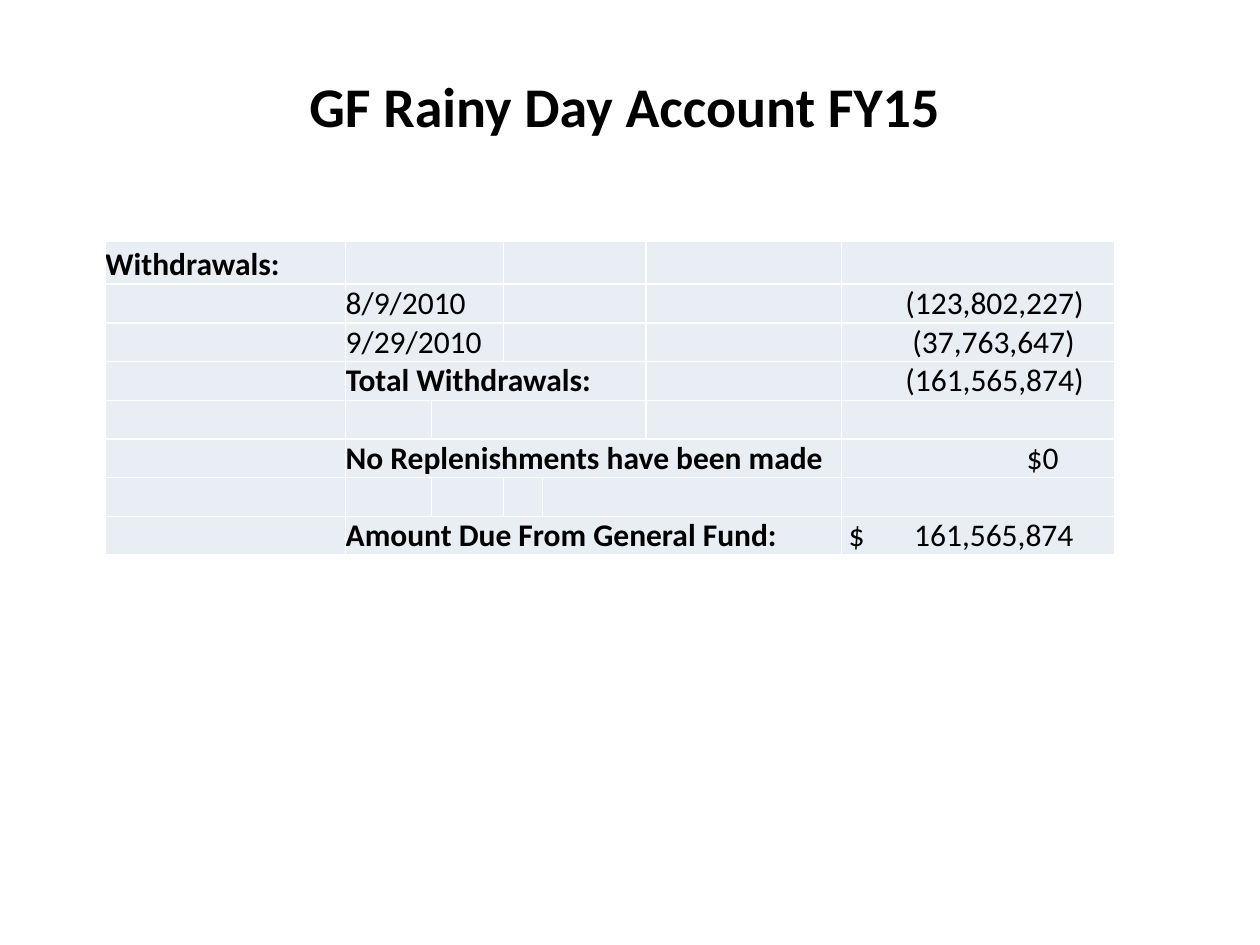
import dataclasses

import lxml.etree
import pptx
import pptx.dml.color
import pptx.enum.text
import pptx.oxml.ns
import pptx.util

Cm = pptx.util.Cm
Pt = pptx.util.Pt
ALIGN = pptx.enum.text.PP_ALIGN
MIDDLE = pptx.enum.text.MSO_ANCHOR.MIDDLE
BOTTOM = pptx.enum.text.MSO_ANCHOR.BOTTOM


@dataclasses.dataclass(frozen=True)
class Theme:
    font: str = "Calibri"
    ink: str = "000000"
    fill: str = "E9EDF4"
    rule: str = "FFFFFF"
    head: int = 32
    body: int = 18
    line: int = 1


@dataclasses.dataclass(frozen=True)
class Entry:
    """Text of one cell; pad is the right inset in cm of a right-aligned sum."""
    text: str
    bold: bool = False
    pad: float = 0
    left: float = 0
    tab: float = 0


COLS = [4.85, 1.73, 1.45, 0.79, 2.08, 3.94, 5.51]
FIRST, OTHER = 0.86, 0.78

# Each row: the column spans, then the entries by column.
ROWS = [
    ([1, 2, 2, 1, 1], {0: Entry("Withdrawals:", True)}),
    ([1, 2, 2, 1, 1], {1: Entry("8/9/2010"),
                       6: Entry("(123,802,227)", pad=0.62)}),
    ([1, 2, 2, 1, 1], {1: Entry("9/29/2010"),
                       6: Entry("(37,763,647)", pad=0.8)}),
    ([1, 4, 1, 1], {1: Entry("Total Withdrawals:", True),
                    6: Entry("(161,565,874)", pad=0.62)}),
    ([1, 1, 3, 1, 1], {}),
    ([1, 5, 1], {1: Entry("No Replenishments have been made", True),
                 6: Entry("$0", pad=1.13)}),
    ([1, 1, 1, 1, 2, 1], {}),
    ([1, 5, 1], {1: Entry("Amount Due From General Fund:", True),
                 6: Entry("$\t161,565,874", left=0.15, tab=1.32)}),
]


def tint(hue):
    return pptx.dml.color.RGBColor.from_string(hue)


def add_node(parent, tag, **attrs):
    node = lxml.etree.SubElement(parent, pptx.oxml.ns.qn(tag))
    for name, value in attrs.items():
        node.set(name, str(value))
    return node


class Maker:
    def __init__(self, slide, theme):
        self.slide = slide
        self.theme = theme

    def add_text(self, para, text, size, bold):
        run = para.add_run()
        run.text = text
        run.font.name = self.theme.font
        run.font.size = Pt(size)
        run.font.bold = bold
        run.font.color.rgb = tint(self.theme.ink)

    def title(self, text, left, top, width, height):
        shape = self.slide.shapes.title
        shape.left, shape.top = Cm(left), Cm(top)
        shape.width, shape.height = Cm(width), Cm(height)
        shape.text_frame.vertical_anchor = MIDDLE
        para = shape.text_frame.paragraphs[0]
        para.alignment = ALIGN.CENTER
        self.add_text(para, text, self.theme.head, True)

    def rule(self, cell):
        """Draw all four borders, ahead of the fill as the schema asks."""
        props = cell._tc.get_or_add_tcPr()
        for side in ("a:lnL", "a:lnR", "a:lnT", "a:lnB"):
            line = add_node(props, side, w=Pt(self.theme.line))
            add_node(add_node(line, "a:solidFill"), "a:srgbClr",
                     val=self.theme.rule)

    def style(self, cell):
        self.rule(cell)
        cell.fill.solid()
        cell.fill.fore_color.rgb = tint(self.theme.fill)
        cell.margin_left = cell.margin_right = 0
        cell.margin_top = cell.margin_bottom = 0
        cell.vertical_anchor = BOTTOM

    def enter(self, cell, entry):
        para = cell.text_frame.paragraphs[0]
        cell.margin_left = Cm(entry.left)
        cell.margin_right = Cm(entry.pad)
        para.alignment = ALIGN.RIGHT if entry.pad else ALIGN.LEFT
        if entry.tab:
            stops = add_node(para._p.get_or_add_pPr(), "a:tabLst")
            add_node(stops, "a:tab", pos=Cm(entry.tab), algn="l")
        self.add_text(para, entry.text, self.theme.body, entry.bold)

    def table(self, rows, cols, left, top):
        highs = [FIRST] + [OTHER] * (len(rows) - 1)
        frame = self.slide.shapes.add_table(
            len(rows), len(cols), Cm(left), Cm(top),
            Cm(sum(cols)), Cm(sum(highs)))
        grid = frame.table
        grid.first_row = grid.horz_banding = False
        for col, width in zip(grid.columns, cols):
            col.width = Cm(width)
        for row, high in zip(grid.rows, highs):
            row.height = Cm(high)
        for cell in grid.iter_cells():
            self.style(cell)
        for r, (spans, entries) in enumerate(rows):
            c = 0
            for span in spans:
                if span > 1:
                    grid.cell(r, c).merge(grid.cell(r, c + span - 1))
                c += span
            for c, entry in entries.items():
                self.enter(grid.cell(r, c), entry)


def main():
    deck = pptx.Presentation()
    deck.slide_width, deck.slide_height = Cm(25.4), Cm(19.05)
    slide = deck.slides.add_slide(deck.slide_layouts.get_by_name("Title Only"))
    maker = Maker(slide, Theme())
    maker.title("GF Rainy Day Account FY15", 2.33, 1.27, 20.53, 1.7)
    maker.table(ROWS, COLS, 2.12, 4.87)
    deck.save("out.pptx")


if __name__ == "__main__":
    main()
